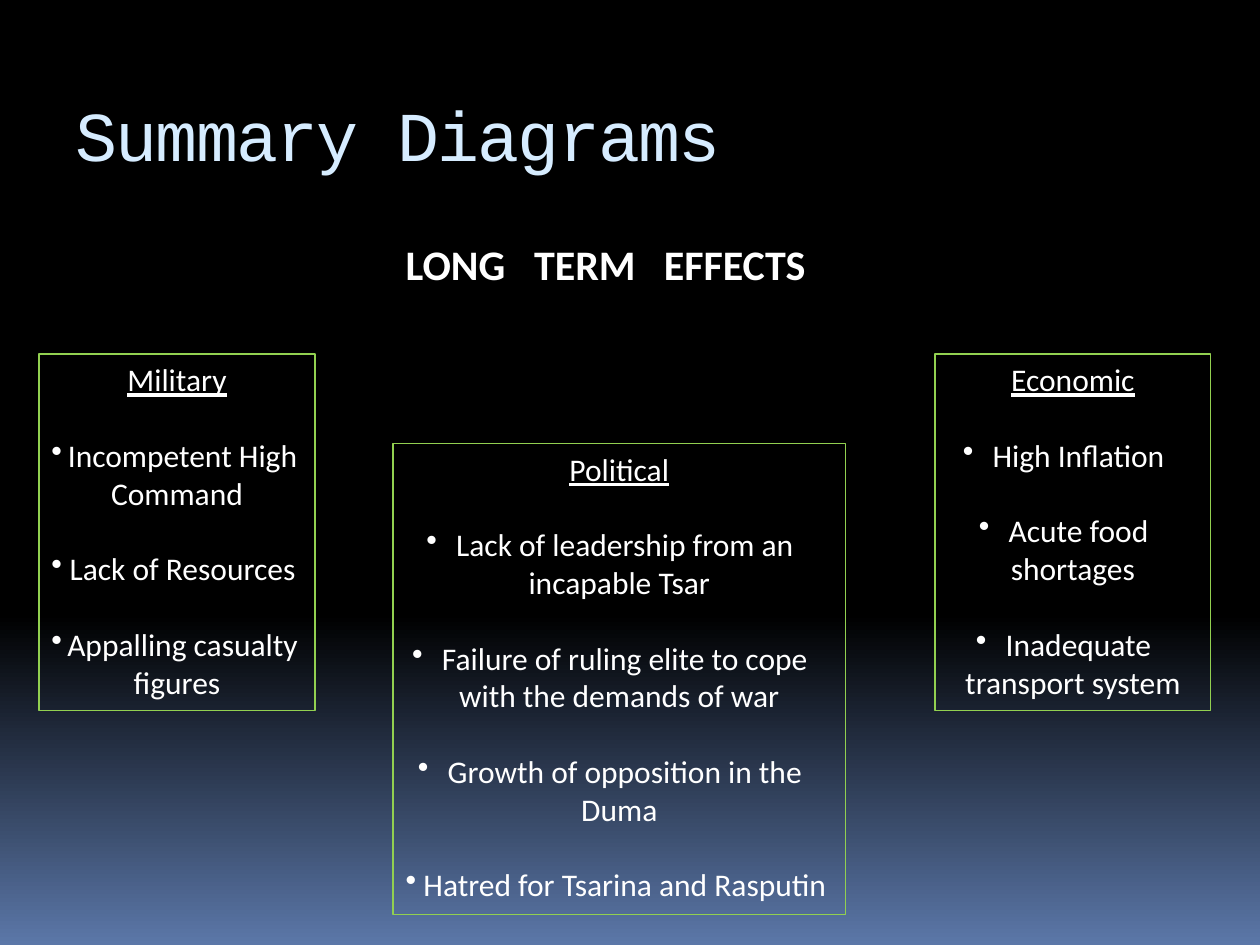
import copy

import pptx
import pptx.dml.color
import pptx.enum.shapes
import pptx.enum.text
import pptx.oxml
import pptx.oxml.ns
import pptx.util

Inches, Pt = pptx.util.Inches, pptx.util.Pt
PP_ALIGN, ANCHOR = pptx.enum.text.PP_ALIGN, pptx.enum.text.MSO_ANCHOR
COLOURS = {"black": "000000", "blue": "5B77A8", "ice": "D6ECFF",
           "white": "FFFFFF", "green": "92D050"}


def rgb(name):
    return pptx.dml.color.RGBColor.from_string(COLOURS[name])


def add_run(paragraph, text, colour="white", **formats):
    run = paragraph.add_run()
    run.text = text
    run.font.color.rgb = rgb(colour)
    for attribute, value in ({"name": "Calibri", "size": Pt(18)} | formats).items():
        setattr(run.font, attribute, value)
    return run


deck = pptx.Presentation()
deck.slide_width, deck.slide_height = Inches(10), Inches(7.5)
slide = deck.slides.add_slide(deck.slide_layouts[6])

# Background: black down to 65 %, then fading to blue
background = slide.background.fill
background.gradient()
background.gradient_angle = 270
stop_list = slide.element.find(".//" + pptx.oxml.ns.qn("a:gsLst"))
stop_list.append(copy.deepcopy(stop_list[0]))
for stop, (position, colour) in zip(
        background.gradient_stops, [(0, "black"), (0.65, "black"), (1, "blue")]):
    stop.position = position
    stop.color.rgb = rgb(colour)

# Title
title = slide.shapes.add_textbox(Inches(0.5), Inches(0.56), Inches(9), Inches(1)).text_frame
title.word_wrap = True
title.vertical_anchor = ANCHOR.MIDDLE
title_run = add_run(title.paragraphs[0], "Summary Diagrams", "ice",
                    name="Courier New", size=Pt(40))
title_run.font._element.set("spc", "-100")

# Heading, its words spaced by tab stops
heading = slide.shapes.add_textbox(Inches(3.12), Inches(1.84), Inches(3.98), Inches(0.5)).text_frame
heading.word_wrap = True
heading_line = heading.paragraphs[0]
tabs = pptx.oxml.parse_xml(f"<a:tabLst {pptx.oxml.ns.nsdecls('a')}/>")
for stop in (1.02, 2.05):
    tab = pptx.oxml.parse_xml(f"<a:tab {pptx.oxml.ns.nsdecls('a')} algn='l'/>")
    tab.set("pos", str(Inches(stop)))
    tabs.append(tab)
heading_line._p.get_or_add_pPr().append(tabs)
add_run(heading_line, "LONG\tTERM\tEFFECTS", size=Pt(24), bold=True)

# Effects: name, box (left, top, width, height), points
effects = [
    ("Military", (0.31, 2.81, 2.19, 2.83),
     ["Incompetent High Command", "Lack of Resources", "Appalling casualty figures"]),
    ("Economic", (7.42, 2.81, 2.19, 2.83),
     ["High Inflation", "Acute food shortages", "Inadequate transport system"]),
    ("Political", (3.12, 3.52, 3.59, 3.74),
     ["Lack of leadership from an incapable Tsar",
      "Failure of ruling elite to cope with the demands of war",
      "Growth of opposition in the Duma",
      "Hatred for Tsarina and Rasputin"]),
]
for effect, bounds, points in effects:
    box = slide.shapes.add_shape(pptx.enum.shapes.MSO_SHAPE.RECTANGLE, *map(Inches, bounds))
    box.shadow.inherit = False
    box.fill.background()
    box.line.color.rgb = rgb("green")
    box.line.width = Pt(0.75)
    frame = box.text_frame
    frame.word_wrap = True
    frame.vertical_anchor = ANCHOR.TOP
    frame.auto_size = pptx.enum.text.MSO_AUTO_SIZE.SHAPE_TO_FIT_TEXT
    name_line = frame.paragraphs[0]
    name_line.alignment = PP_ALIGN.CENTER
    add_run(name_line, effect, underline=True)
    for point in points:
        line = frame.add_paragraph()
        bullet = pptx.oxml.parse_xml(f"<a:buChar {pptx.oxml.ns.nsdecls('a')} char='•'/>")
        line._p.get_or_add_pPr().append(bullet)
        line.alignment = PP_ALIGN.CENTER
        line.space_before = Pt(21.6)
        add_run(line, point)

deck.save("out.pptx")
